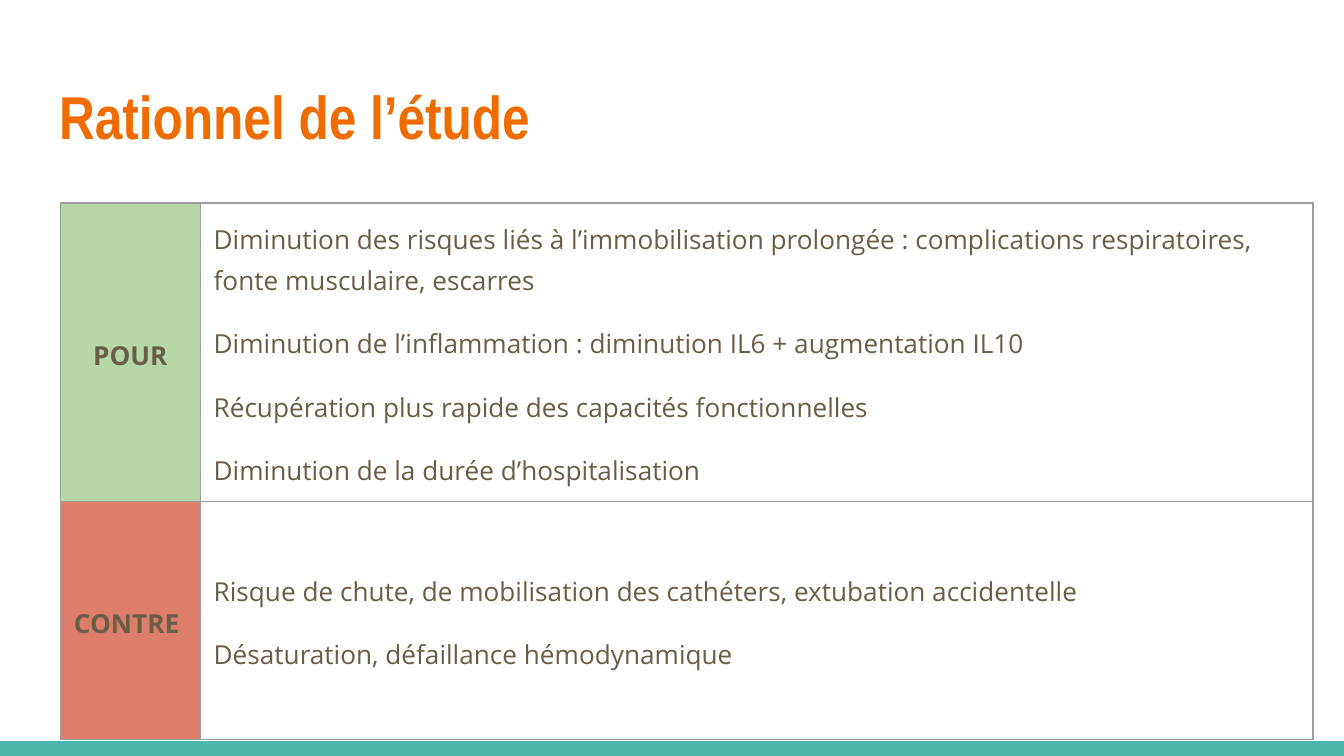
from lxml import etree
from pptx import Presentation
from pptx.dml.color import RGBColor
from pptx.enum.shapes import MSO_SHAPE
from pptx.enum.text import MSO_ANCHOR, MSO_AUTO_SIZE, PP_ALIGN
from pptx.oxml.ns import qn
from pptx.util import Inches, Pt

RECTANGLE = MSO_SHAPE.RECTANGLE
TOP, MIDDLE = MSO_ANCHOR.TOP, MSO_ANCHOR.MIDDLE
LEFT, CENTER = PP_ALIGN.LEFT, PP_ALIGN.CENTER
NO_AUTOFIT = MSO_AUTO_SIZE.NONE

# Content
TITLE = "Rationnel de l’étude"
ARGUMENTS = [
    {
        "label": "POUR", "fill": "for", "align": CENTER,
        "points": [
            "Diminution des risques liés à l’immobilisation prolongée : "
            "complications respiratoires, fonte musculaire, escarres",
            "Diminution de l’inflammation : diminution IL6 + augmentation IL10",
            "Récupération plus rapide des capacités fonctionnelles",
            "Diminution de la durée d’hospitalisation",
        ],
    },
    {
        "label": "CONTRE", "fill": "against", "align": LEFT,
        "points": [
            "Risque de chute, de mobilisation des cathéters, extubation accidentelle",
            "Désaturation, défaillance hémodynamique",
        ],
    },
]

# Style
COLORS = {
    "title": "EF6C00", "text": "695D46", "band": "4DB6AC", "border": "9E9E9E",
    "for": "B6D7A8", "against": "DD7E6B", "background": "FFFFFF",
}
TITLE_FONT, BODY_FONT = "Arial Narrow", "Open Sans"
SLIDE_WIDTH = Inches(10)
SLIDE_HEIGHT = SLIDE_WIDTH * 9 // 16
BAND_HEIGHT = Inches(0.11)
COLUMN_WIDTHS = (1.04, 8.28)
ROW_HEIGHT = 1.77
INSET = Inches(0.1)
GAP = Pt(12)


def color(name):
    return RGBColor.from_string(COLORS[name])


def add_run(paragraph, text, font, size, color_name, bold=False):
    run = paragraph.add_run()
    run.text = text
    run.font.name = font
    run.font.size = Pt(size)
    run.font.bold = bold
    run.font.color.rgb = color(color_name)


def set_insets(target, anchor):
    target.margin_left = target.margin_right = INSET
    target.margin_top = target.margin_bottom = INSET
    target.vertical_anchor = anchor


def set_borders(cell):
    properties = cell._tc.get_or_add_tcPr()
    for position, side in enumerate(("a:lnL", "a:lnR", "a:lnT", "a:lnB")):
        line = etree.Element(qn(side), w=str(Pt(0.75)))
        fill = etree.SubElement(line, qn("a:solidFill"))
        etree.SubElement(fill, qn("a:srgbClr"), val=COLORS["border"])
        properties.insert(position, line)


def fill_cell(cell, texts, align=LEFT, bold=False, fill=None):
    set_insets(cell, MIDDLE)
    if fill:
        cell.fill.solid()
        cell.fill.fore_color.rgb = color(fill)
    else:
        cell.fill.background()
    set_borders(cell)
    frame = cell.text_frame
    for index, text in enumerate(texts):
        paragraph = frame.add_paragraph() if index else frame.paragraphs[0]
        paragraph.alignment = align
        paragraph.line_spacing = 1.15
        paragraph.space_before = GAP if index else Pt(0)
        paragraph.space_after = GAP if index == len(texts) - 1 else Pt(0)
        add_run(paragraph, text, BODY_FONT, 14, "text", bold)


presentation = Presentation()
presentation.slide_width = SLIDE_WIDTH
presentation.slide_height = SLIDE_HEIGHT
slide = presentation.slides.add_slide(presentation.slide_layouts[5])
slide.background.fill.solid()
slide.background.fill.fore_color.rgb = color("background")

# Bottom band
band = slide.shapes.add_shape(
    RECTANGLE, 0, SLIDE_HEIGHT - BAND_HEIGHT, SLIDE_WIDTH, BAND_HEIGHT)
band.shadow.inherit = False
band.fill.solid()
band.fill.fore_color.rgb = color("band")
band.line.fill.background()

# Title
title = slide.shapes.title
title.left, title.top = Inches(0.34), Inches(0.49)
title.width, title.height = Inches(9.32), Inches(0.77)
title_frame = title.text_frame
title_frame.word_wrap = True
title_frame.auto_size = NO_AUTOFIT
set_insets(title_frame, TOP)
title_paragraph = title_frame.paragraphs[0]
title_paragraph.alignment = LEFT
add_run(title_paragraph, TITLE, TITLE_FONT, 32.4, "title", bold=True)

# Table of arguments
table = slide.shapes.add_table(
    len(ARGUMENTS), len(COLUMN_WIDTHS), Inches(0.45), Inches(1.51),
    Inches(sum(COLUMN_WIDTHS)), Inches(ROW_HEIGHT * len(ARGUMENTS)),
).table
table.first_row = table.horz_banding = False
for column, width in zip(table.columns, COLUMN_WIDTHS):
    column.width = Inches(width)
for index, argument in enumerate(ARGUMENTS):
    table.rows[index].height = Inches(ROW_HEIGHT)
    fill_cell(table.cell(index, 0), [argument["label"]], argument["align"],
              bold=True, fill=argument["fill"])
    fill_cell(table.cell(index, 1), argument["points"])

presentation.save("out.pptx")
